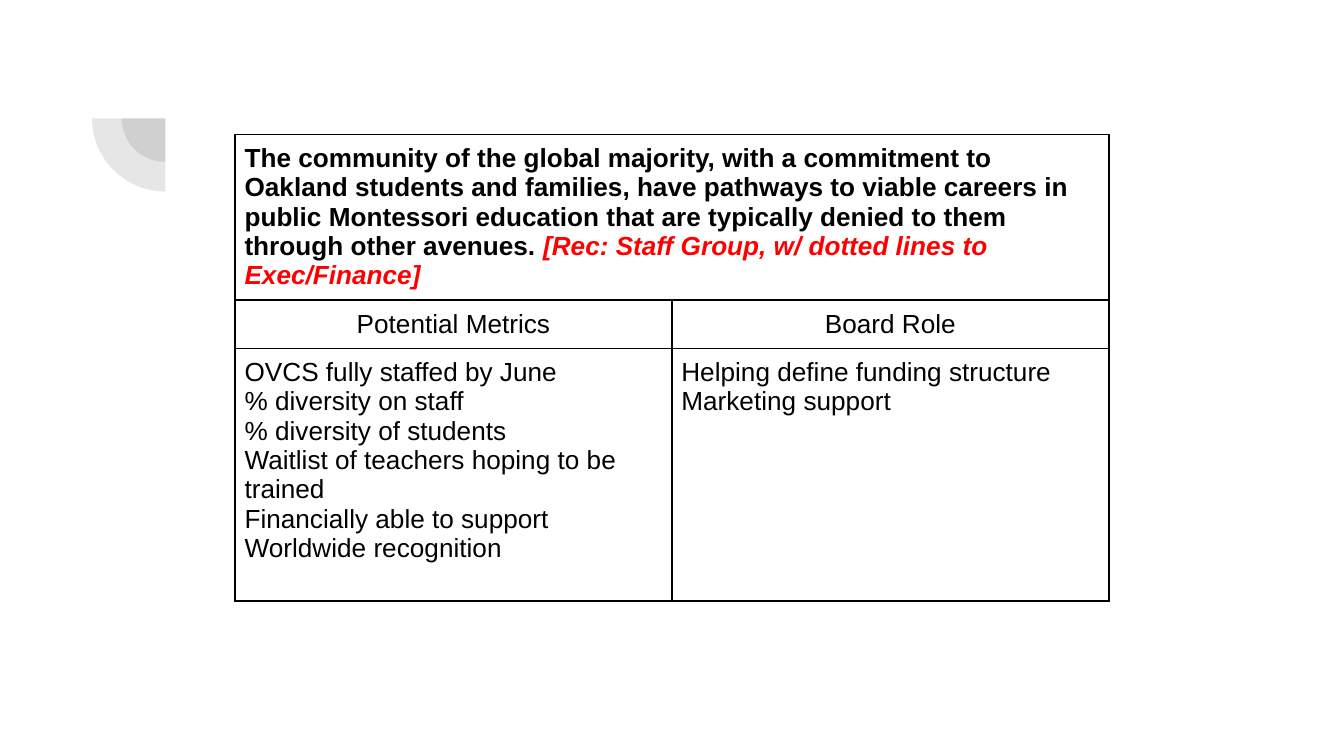
from lxml import etree
from pptx import Presentation
from pptx.dml.color import RGBColor
from pptx.enum import shapes, text
from pptx.oxml.ns import qn
from pptx.util import Inches, Pt

THEME = {
    "font": "Arial", "size": Pt(14), "ink": "000000", "note": "FF0000",
    "pie": "424242", "pie_alpha": 13, "border": "000000", "border_width": Pt(1),
}

GOAL = ("The community of the global majority, with a commitment to Oakland students "
        "and families, have pathways to viable careers in public Montessori education "
        "that are typically denied to them through other avenues. ")
RECOMMENDATION = "[Rec: Staff Group, w/ dotted lines to Exec/Finance]"
COLUMNS = [
    ("Potential Metrics", [
        "OVCS fully staffed by June",
        "% diversity on staff",
        "% diversity of students",
        "Waitlist of teachers hoping to be trained",
        "Financially able to support",
        "Worldwide recognition",
    ]),
    ("Board Role", ["Helping define funding structure", "Marketing support"]),
]

SLIDE_WIDTH = 10
SLIDE_HEIGHT = SLIDE_WIDTH * 9 / 16
TABLE_LEFT, TABLE_TOP, COLUMN_WIDTH = 1.75, 1, 3.25
ROW_HEIGHTS = [1.23, 0.36, 1.88]
CELL_MARGIN = Inches(0.07)
PIE_CENTER, PIE_DIAMETERS = (1.23, 0.88), (0.65, 1.09)


def add_corner_pie(slide, diameter):
    x, y = (Inches(c - diameter / 2) for c in PIE_CENTER)
    pie = slide.shapes.add_shape(shapes.MSO_SHAPE.PIE, x, y, Inches(diameter), Inches(diameter))
    pie.rotation = 270
    pie.adjustments[0], pie.adjustments[1] = 108, 162
    pie.shadow.inherit = False
    pie.line.fill.background()
    pie.fill.solid()
    pie.fill.fore_color.rgb = RGBColor.from_string(THEME["pie"])
    color = pie.fill._xPr.find(".//" + qn("a:srgbClr"))
    etree.SubElement(color, qn("a:alpha"), val=str(THEME["pie_alpha"] * 1000))


def add_borders(cell):
    properties = cell._tc.get_or_add_tcPr()
    for position, side in enumerate(("lnL", "lnR", "lnT", "lnB")):
        line = etree.Element(qn("a:" + side), w=str(THEME["border_width"]))
        fill = etree.SubElement(line, qn("a:solidFill"))
        etree.SubElement(fill, qn("a:srgbClr"), val=THEME["border"])
        properties.insert(position, line)


def write(cell, paragraphs, align=text.PP_ALIGN.LEFT, bold=False):
    """Fill a cell; each paragraph is a list of (words, color, italic) runs."""
    frame = cell.text_frame
    for index, runs in enumerate(paragraphs):
        paragraph = frame.add_paragraph() if index else frame.paragraphs[0]
        paragraph.alignment = align
        paragraph.font.name, paragraph.font.size = THEME["font"], THEME["size"]
        paragraph.font.bold = bold
        for words, color, italic in runs:
            run = paragraph.add_run()
            run.text = words
            run.font.italic = italic
            run.font.color.rgb = RGBColor.from_string(color)


def plain(words):
    return [(words, THEME["ink"], False)]


def add_goal_table(slide):
    table = slide.shapes.add_table(
        len(ROW_HEIGHTS), len(COLUMNS), Inches(TABLE_LEFT), Inches(TABLE_TOP),
        Inches(COLUMN_WIDTH * len(COLUMNS)), Inches(sum(ROW_HEIGHTS))).table
    table.first_row = table.horz_banding = False
    for row, height in zip(table.rows, ROW_HEIGHTS):
        row.height = Inches(height)
    for cell in table.iter_cells():
        cell.margin_left = cell.margin_right = CELL_MARGIN
        cell.margin_top = cell.margin_bottom = CELL_MARGIN
        cell.fill.background()
        add_borders(cell)

    table.cell(0, 0).merge(table.cell(0, len(COLUMNS) - 1))
    goal = plain(GOAL) + [(RECOMMENDATION, THEME["note"], True)]
    write(table.cell(0, 0), [goal], bold=True)
    for column, (heading, items) in enumerate(COLUMNS):
        write(table.cell(1, column), [plain(heading)], text.PP_ALIGN.CENTER)
        write(table.cell(2, column), [plain(item) for item in items])


def main():
    deck = Presentation()
    deck.slide_width, deck.slide_height = Inches(SLIDE_WIDTH), Inches(SLIDE_HEIGHT)
    slide = deck.slides.add_slide(deck.slide_layouts[6])
    for diameter in PIE_DIAMETERS:
        add_corner_pie(slide, diameter)
    add_goal_table(slide)
    deck.save("out.pptx")


if __name__ == "__main__":
    main()
